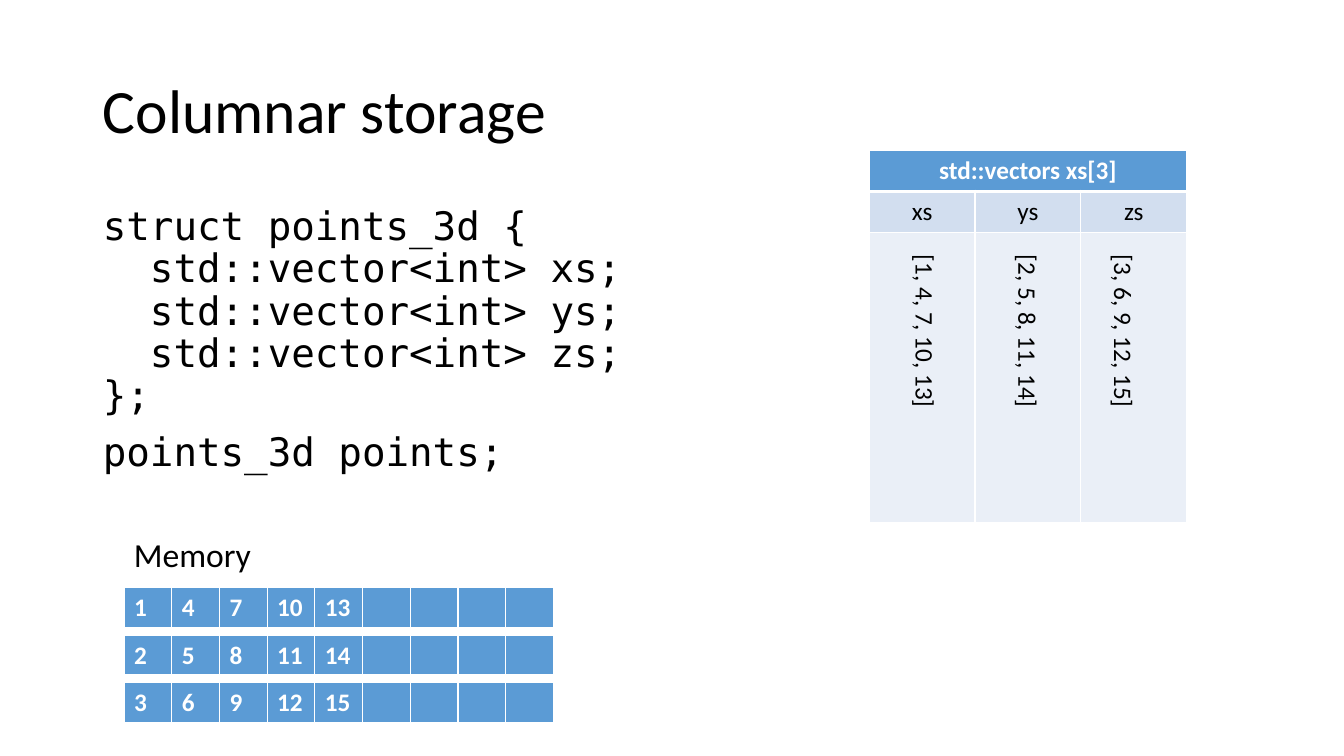
from lxml import etree
from pptx import Presentation
from pptx.dml.color import RGBColor
from pptx.enum.text import MSO_ANCHOR, MSO_AUTO_SIZE, PP_ALIGN
from pptx.oxml.ns import qn
from pptx.util import Pt

LEFT, CENTER = PP_ALIGN.LEFT, PP_ALIGN.CENTER
MIDDLE, NO_FIT = MSO_ANCHOR.MIDDLE, MSO_AUTO_SIZE.NONE
GROW = MSO_AUTO_SIZE.SHAPE_TO_FIT_TEXT
PX = 9144  # 100 px to the inch
SANS, MONO = "Calibri", "DejaVu Sans Mono"
COLORS = {"text": "000000", "white": "FFFFFF", "head": "5B9BD5",
          "band": "D2DEEF", "pale": "EAEFF7"}

# Content
TITLE = "Columnar storage"
CODE = [
    "struct points_3d {\n  std::vector<int> xs;\n  std::vector<int> ys;\n"
    "  std::vector<int> zs;\n};",
    "points_3d points;",
]
LABEL = "Memory"
HEADING = "std::vectors xs[3]"
VECTORS = {"xs": [1, 4, 7, 10, 13], "ys": [2, 5, 8, 11, 14], "zs": [3, 6, 9, 12, 15]}
SLOTS = 9

# Layout in px
TITLE_BOX = (92, 40, 1150, 145)
BODY_BOX = (92, 200, 1150, 476)
LABEL_BOX = (123, 525, 137, 50)
MEMORY = (123, 583, 426, 41)
STEP = 47  # from one memory row to the next
VIEW = (862, 149, 315, 369)
VIEW_ROWS = (41, 41, 287)
LIST_SIZE = (174, 40)
LIST_MIDS = (918, 1020, 1115)
LIST_Y = 330


def emu(box):
    return [n * PX for n in box]


def style(para, size, color="text", font=SANS, bold=False, align=LEFT):
    para.font.size = Pt(size)
    para.font.name = font
    para.font.bold = bold
    para.font.color.rgb = RGBColor.from_string(COLORS[color])
    para.alignment = align


def place(shape, box):
    shape.left, shape.top, shape.width, shape.height = emu(box)


def add_label(slide, text, box, size, turn=0):
    shape = slide.shapes.add_textbox(*emu(box))
    shape.rotation = turn
    frame = shape.text_frame
    frame.word_wrap = False
    frame.auto_size = GROW
    frame.text = text
    style(frame.paragraphs[0], size)


def add_grid(slide, rows, cols, box):
    grid = slide.shapes.add_table(rows, cols, *emu(box)).table
    grid.horz_banding = False
    for col in grid.columns:
        col.width = round(box[2] * PX / cols)
    return grid


def fill_cell(cell, text, fill, color="text", bold=False, align=LEFT, base=1):
    cell.text = text
    style(cell.text_frame.paragraphs[0], 18, color, bold=bold, align=align)
    props = cell._tc.get_or_add_tcPr()
    for side, width in (("L", 1), ("R", 1), ("T", 1), ("B", base)):
        line = etree.SubElement(props, qn(f"a:ln{side}"), w=str(Pt(width)))
        paint = etree.SubElement(line, qn("a:solidFill"))
        etree.SubElement(paint, qn("a:srgbClr"), val=COLORS["white"])
    cell.fill.solid()
    cell.fill.fore_color.rgb = RGBColor.from_string(COLORS[fill])


def add_code(body):
    place(body, BODY_BOX)
    frame = body.text_frame
    frame.auto_size = NO_FIT
    for i, text in enumerate(CODE):
        para = frame.paragraphs[0] if i == 0 else frame.add_paragraph()
        para.text = text.replace("\n", "\v")
        para.line_spacing = 0.9
        para.space_before = Pt(10)
        props = para._p.get_or_add_pPr()
        props.set("marL", "0")
        props.set("indent", "0")
        etree.SubElement(props, qn("a:buNone"))
        style(para, 28, font=MONO)


def add_memory(slide):
    left, top, width, height = MEMORY
    for i, values in enumerate(VECTORS.values()):
        grid = add_grid(slide, 1, SLOTS, (left, top + i * STEP, width, height))
        for j in range(SLOTS):
            text = str(values[j]) if j < len(values) else ""
            fill_cell(grid.cell(0, j), text, "head", "white", bold=True, base=3)


def add_view(slide):
    grid = add_grid(slide, len(VIEW_ROWS), len(VECTORS), VIEW)
    for row, height in zip(grid.rows, VIEW_ROWS):
        row.height = height * PX
    for j, name in enumerate(VECTORS):
        fill_cell(grid.cell(0, j), "" if j else HEADING, "head", "white",
                  bold=True, align=CENTER, base=3)
        fill_cell(grid.cell(1, j), name, "band", align=CENTER)
        fill_cell(grid.cell(2, j), "", "pale")
    grid.cell(0, 0).merge(grid.cell(0, len(VECTORS) - 1))

    # Vectors written downwards over the columns
    width, height = LIST_SIZE
    for values, mid in zip(VECTORS.values(), LIST_MIDS):
        box = (mid - width // 2, LIST_Y - height // 2, width, height)
        add_label(slide, str(values), box, 18, turn=90)


def main():
    deck = Presentation()
    deck.slide_width, deck.slide_height = emu((1333, 750))
    slide = deck.slides.add_slide(deck.slide_layouts[1])

    # Title
    title = slide.shapes.title
    place(title, TITLE_BOX)
    title.text_frame.text = TITLE
    title.text_frame.auto_size = NO_FIT
    title.text_frame.vertical_anchor = MIDDLE
    title.text_frame.paragraphs[0].line_spacing = 0.9
    style(title.text_frame.paragraphs[0], 44)

    add_code(slide.placeholders[1])
    add_memory(slide)
    add_label(slide, LABEL, LABEL_BOX, 24)
    add_view(slide)
    deck.save("out.pptx")


if __name__ == "__main__":
    main()
